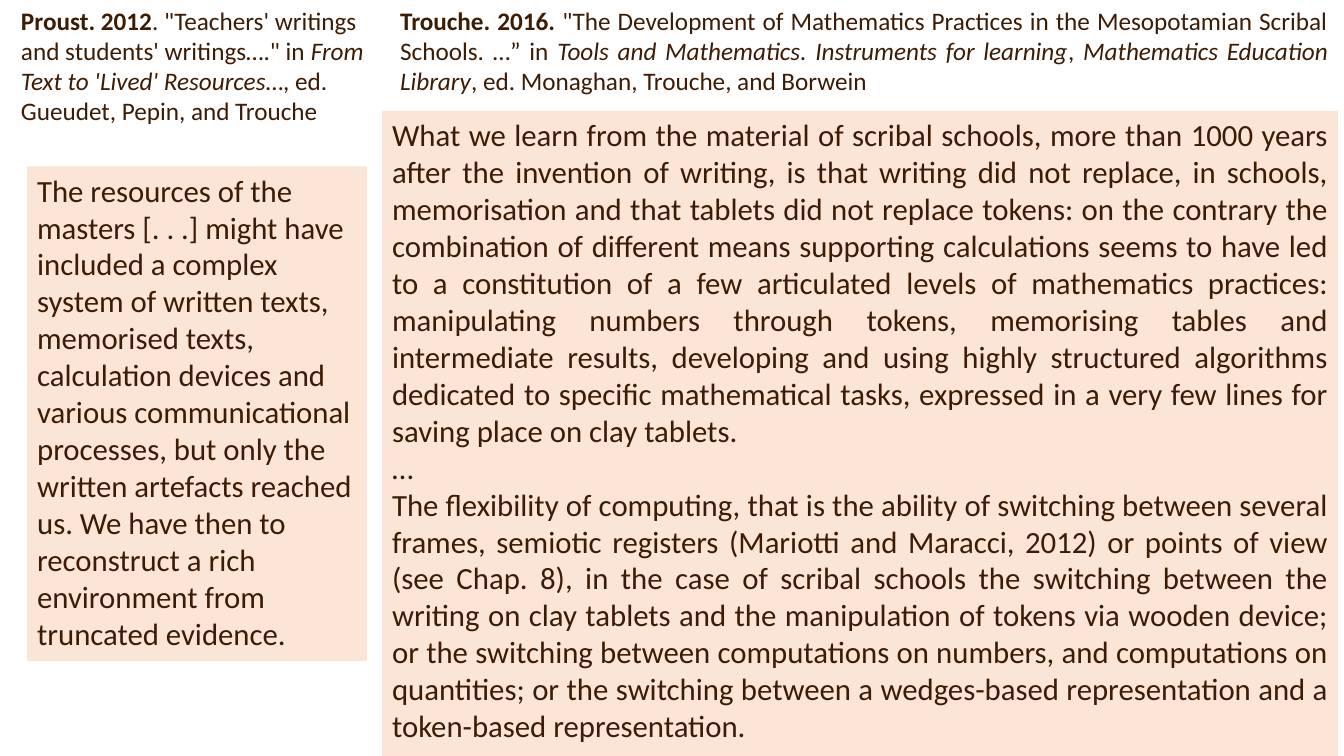
import pptx
import pptx.dml.color
import pptx.enum.shapes
import pptx.enum.text
import pptx.util

PX = 9144  # EMU per px, 100 px to the inch
PAGE_SIZE = (1333, 750)
INK = "3D1C05"
PEACH = "FBE5D6"
FONT = "Calibri"
LEFT = pptx.enum.text.PP_ALIGN.LEFT
JUSTIFY = pptx.enum.text.PP_ALIGN.JUSTIFY

PLAIN = {"bold": False, "italic": False}
BOLD = {"bold": True, "italic": False}
ITALIC = {"bold": False, "italic": True}

# Content: each paragraph is a list of (text, style) spans
PROUST_REFERENCE = [[
    ("Proust. 2012", BOLD),
    (". \"Teachers' writings and students' writings….\" in ", PLAIN),
    ("From Text to 'Lived' Resources", ITALIC),
    ("…, ed. Gueudet, Pepin, and Trouche", PLAIN),
]]
TROUCHE_REFERENCE = [[
    ("Trouche. 2016.", BOLD),
    (" \"The Development of Mathematics Practices in the Mesopotamian "
     "Scribal Schools. …” in ", PLAIN),
    ("Tools and Mathematics. Instruments for learning", ITALIC),
    (", ", PLAIN),
    ("Mathematics Education Library", ITALIC),
    (", ed. Monaghan, Trouche, and Borwein", PLAIN),
]]
PROUST_QUOTE = [[
    ("The resources of the masters [. . .] might have included a complex "
     "system of written texts, memorised texts, calculation devices and "
     "various communicational processes, but only the written artefacts "
     "reached us. We have then to reconstruct a rich environment from "
     "truncated evidence.", PLAIN),
]]
TROUCHE_QUOTE = [
    [("What we learn from the material of scribal schools, more than 1000 "
      "years after the invention of writing, is that writing did not replace, "
      "in schools, memorisation and that tablets did not replace tokens: on "
      "the contrary the combination of different means supporting "
      "calculations seems to have led to a constitution of a few articulated "
      "levels of mathematics practices: manipulating numbers through tokens, "
      "memorising tables and intermediate results, developing and using "
      "highly structured algorithms dedicated to specific mathematical tasks, "
      "expressed in a very few lines for saving place on clay tablets.",
      PLAIN)],
    [("…", PLAIN)],
    [("The flexibility of computing, that is the ability of switching between "
      "several frames, semiotic registers (Mariotti and Maracci, 2012) or "
      "points of view (see Chap. 8), in the case of scribal schools the "
      "switching between the writing on clay tablets and the manipulation of "
      "tokens via wooden device; or the switching between computations on "
      "numbers, and computations on quantities; or the switching between a "
      "wedges-based representation and a token-based representation.",
      PLAIN)],
]

# (left, top, width, height), paragraphs, size, alignment, fill
BLOCKS = [
    ((11, 0, 368, 131), PROUST_REFERENCE, 18, LEFT, None),
    ((387, 0, 940, 101), TROUCHE_REFERENCE, 18, JUSTIFY, None),
    ((27, 165, 337, 491), PROUST_QUOTE, 22, LEFT, PEACH),
    ((379, 110, 948, 640), TROUCHE_QUOTE, 22, JUSTIFY, PEACH),
]


def color(value):
    return pptx.dml.color.RGBColor.from_string(value)


def add_box(page, place, fill):
    lengths = [length * PX for length in place]
    if fill is None:
        return page.shapes.add_textbox(*lengths)
    box = page.shapes.add_shape(
        pptx.enum.shapes.MSO_SHAPE.RECTANGLE, *lengths)
    box.shadow.inherit = False
    box.fill.solid()
    box.fill.fore_color.rgb = color(fill)
    box.line.fill.background()
    return box


def write(frame, paragraphs, size, alignment):
    frame.word_wrap = True
    frame.auto_size = pptx.enum.text.MSO_AUTO_SIZE.SHAPE_TO_FIT_TEXT
    frame.vertical_anchor = pptx.enum.text.MSO_ANCHOR.TOP
    for index, spans in enumerate(paragraphs):
        para = frame.add_paragraph() if index else frame.paragraphs[0]
        para.alignment = alignment
        for text, style in spans:
            span = para.add_run()
            span.text = text
            span.font.color.rgb = color(INK)
            formats = {"name": FONT, "size": pptx.util.Pt(size), **style}
            for name, value in formats.items():
                setattr(span.font, name, value)


def main():
    deck = pptx.Presentation()
    deck.slide_width, deck.slide_height = [side * PX for side in PAGE_SIZE]
    page = deck.slides.add_slide(deck.slide_layouts[6])

    # References above, quotations below
    for place, paragraphs, size, alignment, fill in BLOCKS:
        box = add_box(page, place, fill)
        write(box.text_frame, paragraphs, size, alignment)

    deck.save("out.pptx")


if __name__ == "__main__":
    main()
